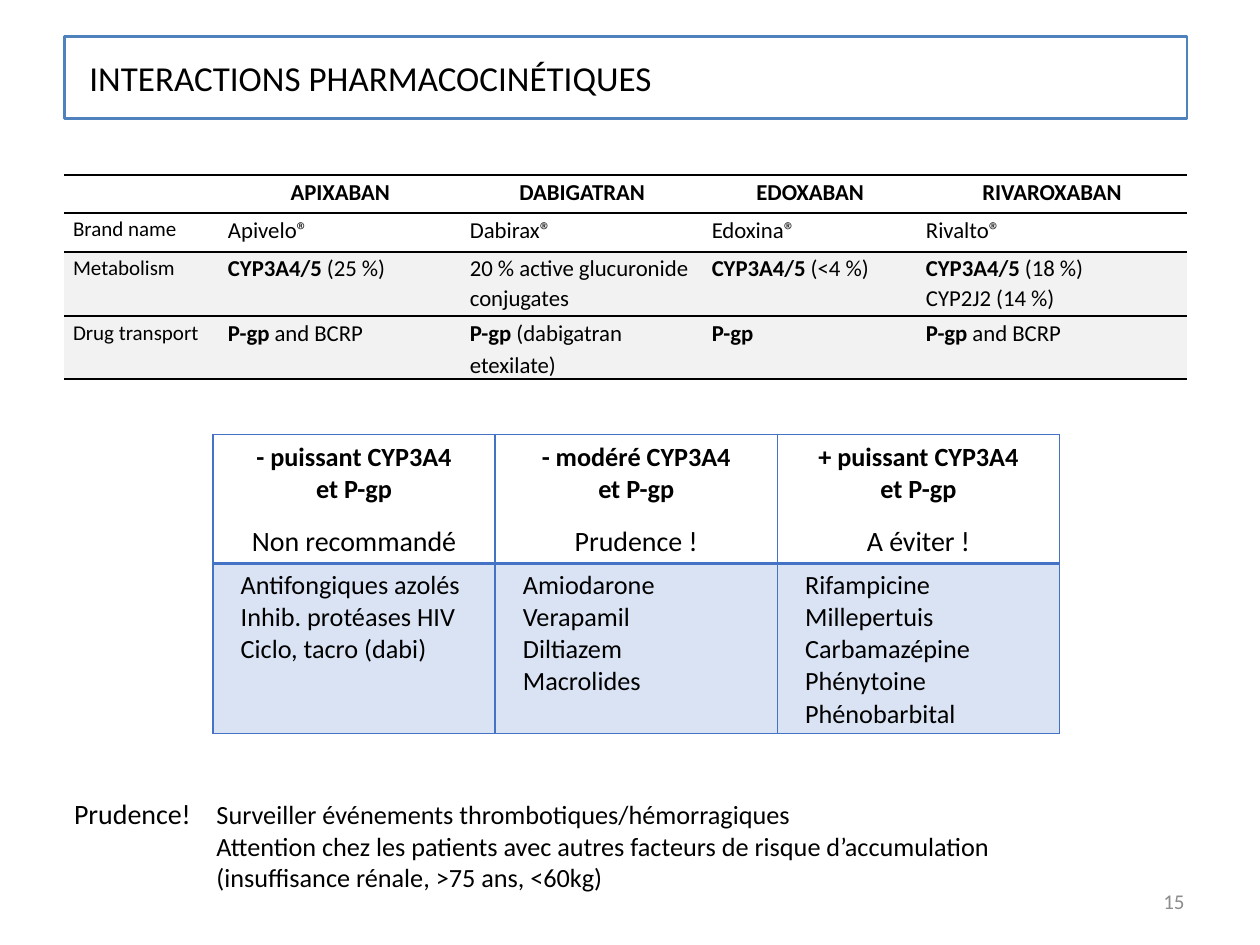
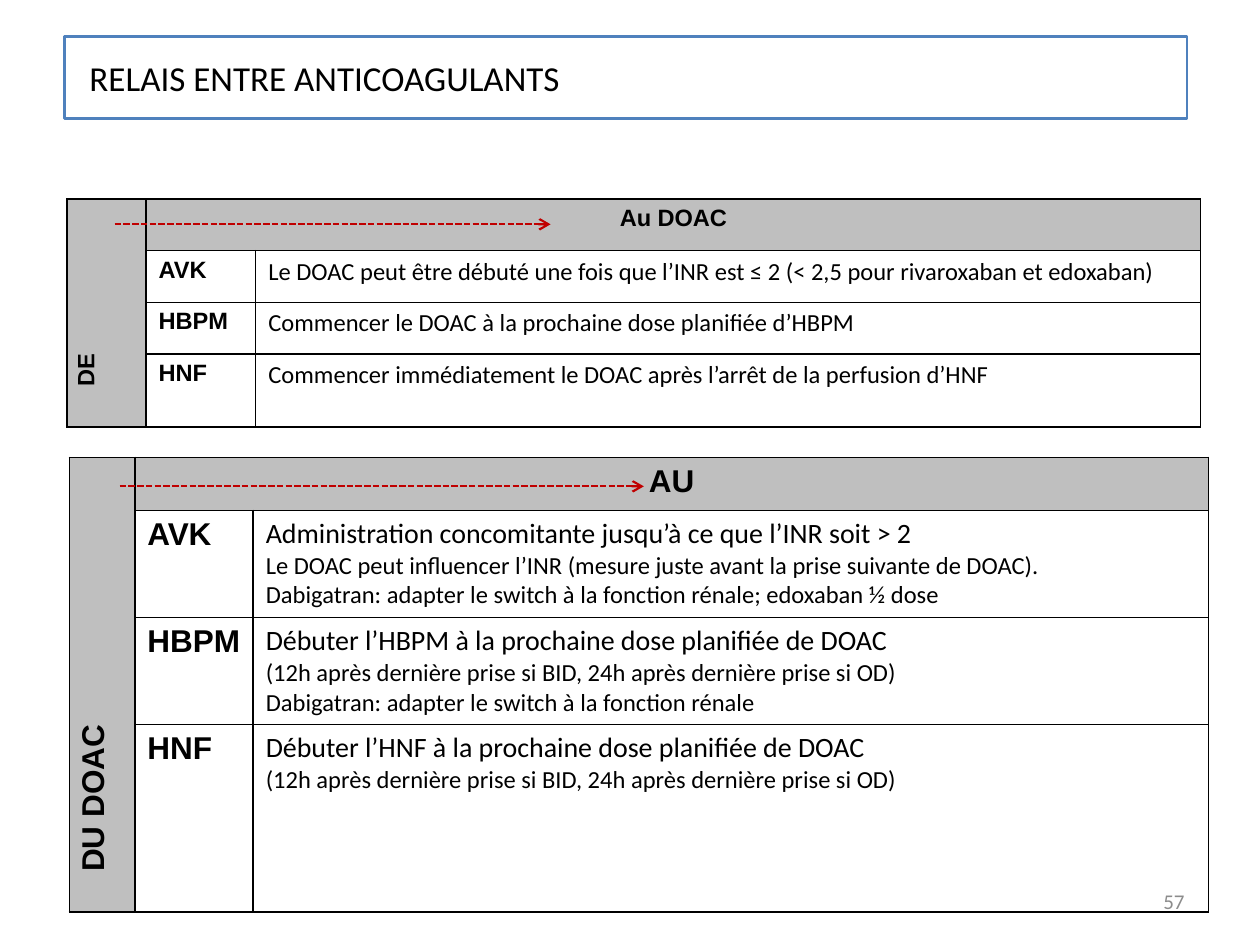
from dataclasses import dataclass

from lxml import etree
from pptx import Presentation
from pptx import util as u
from pptx.dml.color import RGBColor
from pptx.enum import dml, shapes, text
from pptx.oxml import ns


@dataclass(frozen=True)
class Theme:
    body: str = "Calibri"
    label: str = "Arial"
    black: str = "000000"
    number: str = "8C8C8C"
    title_line: str = "4F81BD"
    blue: str = "4472C4"
    pale_blue: str = "DAE3F3"
    pale_grey: str = "F2F2F2"
    grey: str = "BFBFBF"
    red: str = "C00000"
    title_size: float = 20
    number_size: float = 12
    lead_size: float = 16
    list_size: float = 15
    detail_size: float = 14
    drug_size: float = 13
    row_label_size: float = 12


THEME = Theme()
CENTER, RIGHT, JUSTIFY = text.PP_ALIGN.CENTER, text.PP_ALIGN.RIGHT, text.PP_ALIGN.JUSTIFY
NO_GRID_STYLE = "{2D5ABB26-0587-4C30-8999-92F81FD0307C}"


@dataclass
class Line:
    """One paragraph; words before a "|" are bold."""
    words: str
    size: float
    bold: bool = False
    font: str = THEME.body
    color: str = THEME.black
    align: object = None
    spacing: float = 1.0
    before: float = 0
    after: float = 0
    indent: float = 0
    hanging: bool = False


# Content: pharmacokinetics
DRUG_ROWS = [
    ["", "APIXABAN", "DABIGATRAN", "EDOXABAN", "RIVAROXABAN"],
    ["Brand name", "Apivelo®", "Dabirax®", "Edoxina®", "Rivalto®"],
    ["Metabolism", "CYP3A4/5| (25 %)", "20 % active glucuronide conjugates",
     "CYP3A4/5| (<4 %)", "CYP3A4/5| (18 %)\nCYP2J2 (14 %)"],
    ["Drug transport", "P-gp| and BCRP", "P-gp| (dabigatran etexilate)",
     "P-gp|", "P-gp| and BCRP"],
]
INTERACTIONS = [
    ("- puissant CYP3A4", "Non recommandé",
     ["Antifongiques azolés", "Inhib. protéases HIV", "Ciclo, tacro (dabi)"]),
    ("- modéré CYP3A4", "Prudence !",
     ["Amiodarone", "Verapamil", "Diltiazem", "Macrolides"]),
    ("+ puissant CYP3A4", "A éviter !",
     ["Rifampicine", "Millepertuis", "Carbamazépine", "Phénytoine", "Phénobarbital"]),
]
WARNING = "Prudence!"
WARNING_LINES = [
    "Surveiller événements thrombotiques/hémorragiques",
    "Attention chez les patients avec autres facteurs de risque d’accumulation",
    "(insuffisance rénale, >75 ans, <60kg)",
]

# Content: switches between anticoagulants
SWITCHES = [
    dict(
        at=(0.53, 1.58), columns=[0.63, 0.87, 7.5], rows=[0.41, 0.41, 0.41, 0.56],
        origin="DE", target="Au DOAC", label_size=13.5, first_size=THEME.detail_size,
        arrow=(0.91, 4.37, 1.78),
        steps=[
            ("AVK", ["Le DOAC peut être débuté une fois que l’INR est ≤ 2 "
                     "(< 2,5 pour rivaroxaban et edoxaban)"]),
            ("HBPM", ["Commencer le DOAC à la prochaine dose planifiée d’HBPM"]),
            ("HNF", ["Commencer immédiatement le DOAC après l’arrêt de la perfusion d’HNF"]),
        ]),
    dict(
        at=(0.55, 3.63), columns=[0.52, 0.94, 7.58], rows=[0.42, 0.85, 0.85, 1.49],
        origin="DU DOAC", target="AU", label_size=18, first_size=THEME.lead_size,
        arrow=(0.95, 5.11, 3.86),
        steps=[
            ("AVK", ["Administration concomitante jusqu’à ce que l’INR soit > 2",
                     "Le DOAC peut influencer l’INR (mesure juste avant la prise suivante de DOAC).",
                     "Dabigatran: adapter le switch à la fonction rénale; edoxaban ½ dose"]),
            ("HBPM", ["Débuter l’HBPM à la prochaine dose planifiée de DOAC",
                      "(12h après dernière prise si BID, 24h après dernière prise si OD)",
                      "Dabigatran: adapter le switch à la fonction rénale"]),
            ("HNF", ["Débuter l’HNF à la prochaine dose planifiée de DOAC",
                     "(12h après dernière prise si BID, 24h après dernière prise si OD)"]),
        ]),
]


# Shared helpers
def rgb(value):
    return RGBColor.from_string(value)


def inches(*lengths):
    return [u.Inches(length) for length in lengths]


def write(frame, lines):
    for index, line in enumerate(lines):
        para = frame.paragraphs[0] if index == 0 else frame.add_paragraph()
        para.alignment = line.align
        para.line_spacing = line.spacing
        para.space_before, para.space_after = u.Pt(line.before), u.Pt(line.after)
        if line.indent:
            margin = u.Inches(line.indent)
            properties = para._p.get_or_add_pPr()
            properties.set("marL", str(margin))
            properties.set("indent", str(-margin if line.hanging else 0))
        lead, bar, rest = line.words.partition("|")
        para.text = lead
        if rest:
            para.add_run().text = rest
        para.font.size = u.Pt(line.size)
        for position, span in enumerate(para.runs):
            span.font.name = line.font
            span.font.size = u.Pt(line.size)
            span.font.bold = line.bold or (bool(bar) and position == 0)
            span.font.color.rgb = rgb(line.color)


def add_text(page, at, lines):
    box = page.shapes.add_textbox(*inches(*at))
    box.text_frame.word_wrap = True
    write(box.text_frame, lines)
    return box


def add_page(deck, title, number):
    page = deck.slides.add_slide(deck.slide_layouts[6])
    box = page.shapes.add_shape(shapes.MSO_SHAPE.RECTANGLE, *inches(0.51, 0.29, 8.91, 0.65))
    box.shadow.inherit = False
    box.fill.background()
    box.line.color.rgb = rgb(THEME.title_line)
    box.line.width = u.Pt(1.5)
    frame = box.text_frame
    frame.word_wrap = True
    frame.vertical_anchor = text.MSO_ANCHOR.TOP
    frame.margin_left = frame.margin_right = u.Inches(0.2)
    frame.margin_top = frame.margin_bottom = u.Inches(0.16)
    write(frame, [Line(title, THEME.title_size, align=JUSTIFY, after=4)])
    footer = add_text(page, (7.17, 6.95, 2.33, 0.4),
                      [Line(number, THEME.number_size, color=THEME.number, align=RIGHT)])
    footer.text_frame.vertical_anchor = text.MSO_ANCHOR.MIDDLE
    return page


def add_grid(page, at, columns, rows):
    frame = page.shapes.add_table(len(rows), len(columns),
                                  *inches(*at, sum(columns), sum(rows)))
    table = frame.table
    table.first_row = table.horz_banding = False
    table._tbl.tblPr.find(ns.qn("a:tableStyleId")).text = NO_GRID_STYLE
    for column, width in zip(table.columns, columns):
        column.width = u.Inches(width)
    for row, height in zip(table.rows, rows):
        row.height = u.Inches(height)
    return table


def style_cell(cell, color, edges, fill=None):
    """Draw the edges, a dict of side (L, R, T, B) to points, then the fill."""
    properties = cell._tc.get_or_add_tcPr()
    for side in "LRTB":
        if side in edges:
            edge = etree.SubElement(properties, ns.qn(f"a:ln{side}"), w=str(u.Pt(edges[side])))
            solid = etree.SubElement(edge, ns.qn("a:solidFill"))
            etree.SubElement(solid, ns.qn("a:srgbClr"), val=color)
    if fill:
        cell.fill.solid()
        cell.fill.fore_color.rgb = rgb(fill)
    else:
        cell.fill.background()


def add_arrow(page, start, end, y):
    arrow = page.shapes.add_connector(shapes.MSO_CONNECTOR.STRAIGHT, *inches(start, y, end, y))
    arrow.line.color.rgb = rgb(THEME.red)
    arrow.line.width = u.Pt(1.25)
    arrow.line.dash_style = dml.MSO_LINE.SQUARE_DOT
    etree.SubElement(arrow.line._get_or_add_ln(), ns.qn("a:tailEnd"), type="arrow")
    etree.SubElement(arrow._element.spPr, ns.qn("a:effectLst"))


# Tables
def add_drug_table(page):
    table = add_grid(page, (0.51, 1.39), [1.23, 1.92, 1.92, 1.7, 2.14], [0.3, 0.31, 0.51, 0.5])
    rules = [1.5, 1.5, 1, 1, 1]
    for r, row in enumerate(DRUG_ROWS):
        for c, words in enumerate(row):
            cell = table.cell(r, c)
            cell.margin_left = cell.margin_right = u.Inches(0.07)
            cell.margin_top = cell.margin_bottom = 0
            size = THEME.row_label_size if c == 0 else THEME.drug_size
            spacing = 1.1 if r == 2 and c > 0 else 1.15
            write(cell.text_frame, [
                Line(part, size, bold=r == 0, align=CENTER if r == 0 else None, spacing=spacing)
                for part in words.split("\n")])
            style_cell(cell, THEME.black, {"T": rules[r], "B": rules[r + 1]},
                       THEME.pale_grey if r > 1 else None)


def add_interaction_table(page):
    table = add_grid(page, (1.69, 3.45), [2.24] * len(INTERACTIONS), [1.02, 1.35])
    for c, (effect, advice, drugs) in enumerate(INTERACTIONS):
        head, body = table.cell(0, c), table.cell(1, c)
        write(head.text_frame, [
            Line(effect, THEME.list_size, bold=True, align=CENTER),
            Line("et P-gp", THEME.list_size, bold=True, align=CENTER),
            Line(advice, THEME.lead_size, align=CENTER, before=11)])
        write(body.text_frame, [Line(drug, THEME.list_size, indent=0.12) for drug in drugs])
        style_cell(head, THEME.blue, {"L": 1, "R": 1, "T": 1, "B": 2})
        style_cell(body, THEME.blue, {"L": 1, "R": 1, "T": 2, "B": 1}, THEME.pale_blue)


def add_switch_table(page, switch):
    table = add_grid(page, switch["at"], switch["columns"], switch["rows"])

    def label(words, **options):
        return [Line(words, switch["label_size"], bold=True, font=THEME.label, **options)]

    for r in range(len(switch["rows"])):
        for c in range(len(switch["columns"])):
            style_cell(table.cell(r, c), THEME.black, dict.fromkeys("LRTB", 1),
                       THEME.grey if r == 0 or c == 0 else None)
    origin, target = table.cell(0, 0), table.cell(0, 1)
    origin.merge(table.cell(3, 0))
    target.merge(table.cell(0, 2))
    origin._tc.get_or_add_tcPr().set("vert", "vert270")
    write(origin.text_frame, label(switch["origin"], indent=0.22))
    write(target.text_frame, label(switch["target"], align=CENTER))
    for r, (drug, advice) in enumerate(switch["steps"], start=1):
        write(table.cell(r, 1).text_frame, label(drug))
        write(table.cell(r, 2).text_frame, [
            Line(words, THEME.detail_size if index else switch["first_size"])
            for index, words in enumerate(advice)])
    add_arrow(page, *switch["arrow"])


def main():
    deck = Presentation()
    deck.slide_width, deck.slide_height = inches(10, 7.5)

    # Pharmacokinetic interactions
    page = add_page(deck, "INTERACTIONS PHARMACOCINÉTIQUES", "15")
    add_drug_table(page)
    add_interaction_table(page)
    notice = [Line(words, THEME.list_size, indent=1.13) for words in WARNING_LINES]
    notice[0].words = f"{WARNING}|\t{WARNING_LINES[0]}"
    notice[0].hanging = True
    box = add_text(page, (0.49, 6.27, 7.64, 0.88), notice)
    warning = box.text_frame.paragraphs[0].runs[0]
    warning.font.size, warning.font.bold = u.Pt(THEME.lead_size), False

    # Switching anticoagulants
    page = add_page(deck, "RELAIS ENTRE ANTICOAGULANTS", "57")
    for switch in SWITCHES:
        add_switch_table(page, switch)

    deck.save("out.pptx")


if __name__ == "__main__":
    main()
